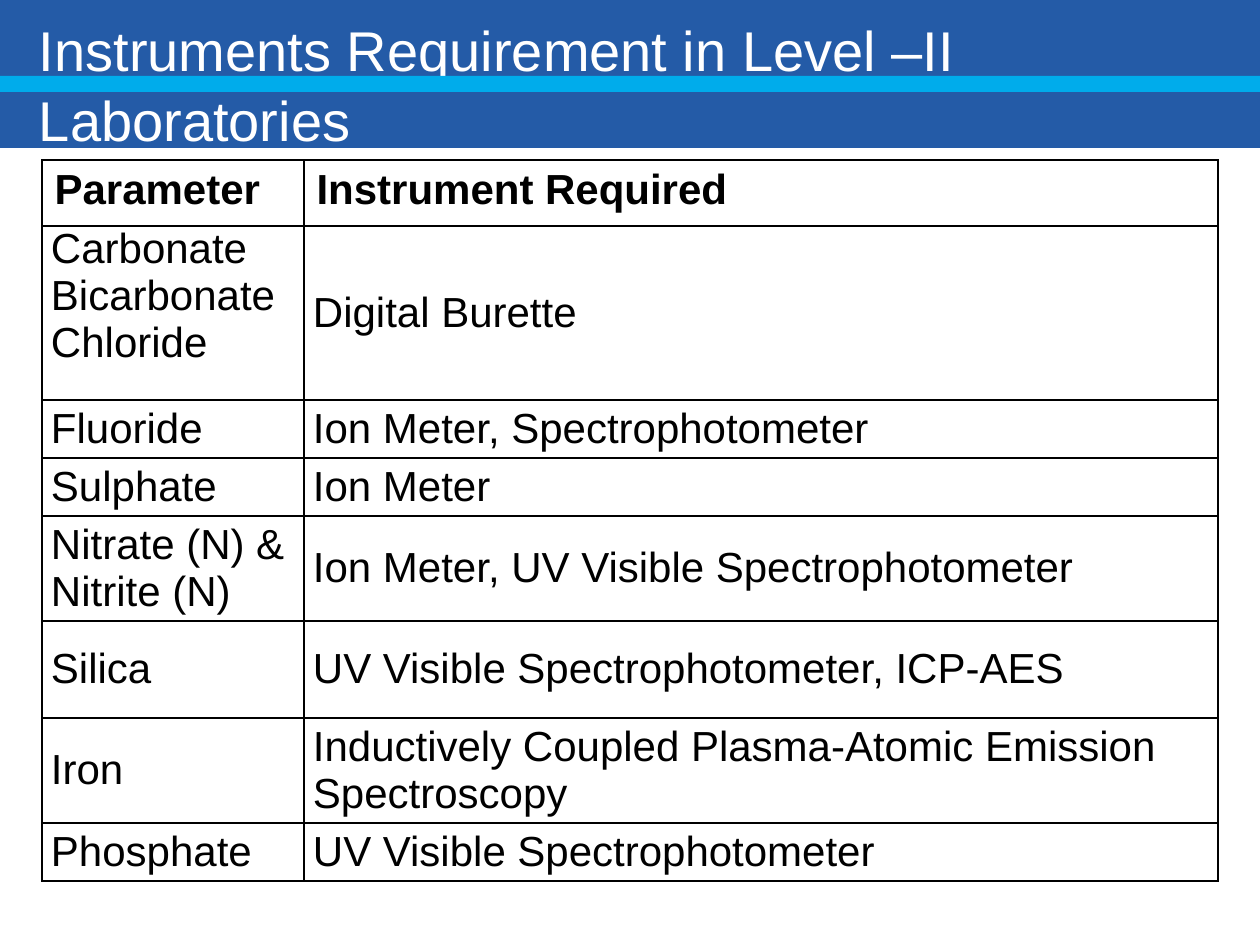
from lxml import etree
from pptx import Presentation
from pptx import util as u
from pptx.dml.color import RGBColor
from pptx.enum import shapes, text
from pptx.oxml.ns import qn

PX = 914400 // 126
FONT = "Arial"


def paint(fill, color):
    fill.solid()
    fill.fore_color.rgb = RGBColor.from_string(color)


def add_borders(cell):
    properties = cell._tc.get_or_add_tcPr()
    for index, side in enumerate(("lnL", "lnR", "lnT", "lnB")):
        line = etree.Element(qn(f"a:{side}"), w=str(u.Pt(1)))
        solid = etree.SubElement(line, qn("a:solidFill"))
        etree.SubElement(solid, qn("a:srgbClr"), val="000000")
        properties.insert(index, line)


presentation = Presentation()
presentation.slide_width = 1260 * PX
presentation.slide_height = 945 * PX
slide = presentation.slides.add_slide(presentation.slide_layouts[5])

# Title band
title = slide.shapes.title
title.left, title.top, title.width, title.height = 0, -5 * PX, 1260 * PX, 153 * PX
paint(title.fill, "245BA7")
frame = title.text_frame
frame.text = "Instruments Requirement in Level –II Laboratories"
frame.word_wrap = True
frame.auto_size = text.MSO_AUTO_SIZE.NONE
frame.vertical_anchor = text.MSO_ANCHOR.TOP
frame.margin_left = frame.margin_right = frame.margin_bottom = 0
frame.margin_top = 18 * PX
paragraph = frame.paragraphs[0]
paragraph.alignment = text.PP_ALIGN.LEFT
paragraph.space_before = u.Pt(10)
paragraph.line_spacing = 1.04
paragraph._p.get_or_add_pPr().set("marL", str(39 * PX))
paragraph.font.name = FONT
paragraph.font.size = u.Pt(32)
paint(paragraph.font.fill, "FFFFFF")

# Light stripe across the band
stripe = slide.shapes.add_shape(
    shapes.MSO_SHAPE.RECTANGLE, 0, 76 * PX, 1260 * PX, 16 * PX)
stripe.shadow.inherit = False
paint(stripe.fill, "00ACEB")
stripe.line.fill.background()

# Instrument table
rows = [
    (66, "Parameter", "Instrument Required"),
    (174, "Carbonate\nBicarbonate\nChloride", "Digital Burette"),
    (58, "Fluoride", "Ion Meter, Spectrophotometer"),
    (58, "Sulphate", "Ion Meter"),
    (105, "Nitrate (N) & Nitrite (N)", "Ion Meter, UV Visible Spectrophotometer"),
    (97, "Silica", "UV Visible Spectrophotometer, ICP-AES"),
    (105, "Iron", "Inductively Coupled Plasma-Atomic Emission Spectroscopy"),
    (58, "Phosphate", "UV Visible Spectrophotometer"),
]
column_widths = (262, 914)
table = slide.shapes.add_table(
    len(rows), len(column_widths), 42 * PX, 160 * PX,
    sum(column_widths) * PX, sum(row[0] for row in rows) * PX).table
table.horz_banding = False
for column, width in zip(table.columns, column_widths):
    column.width = width * PX

for row_index, (height, *labels) in enumerate(rows):
    table.rows[row_index].height = height * PX
    is_header = row_index == 0
    for column_index, label in enumerate(labels):
        cell = table.cell(row_index, column_index)
        cell.text = label
        paint(cell.fill, "FFFFFF")
        add_borders(cell)
        if not is_header:
            cell.margin_left = cell.margin_right = 9 * PX
            cell.margin_top = cell.margin_bottom = 0
        at_top = is_header or "\n" in label
        cell.vertical_anchor = (
            text.MSO_ANCHOR.TOP if at_top else text.MSO_ANCHOR.MIDDLE)
        for paragraph in cell.text_frame.paragraphs:
            paragraph.font.name = FONT
            paragraph.font.size = u.Pt(24)
            paragraph.font.bold = is_header
            paint(paragraph.font.fill, "000000")

presentation.save("out.pptx")
